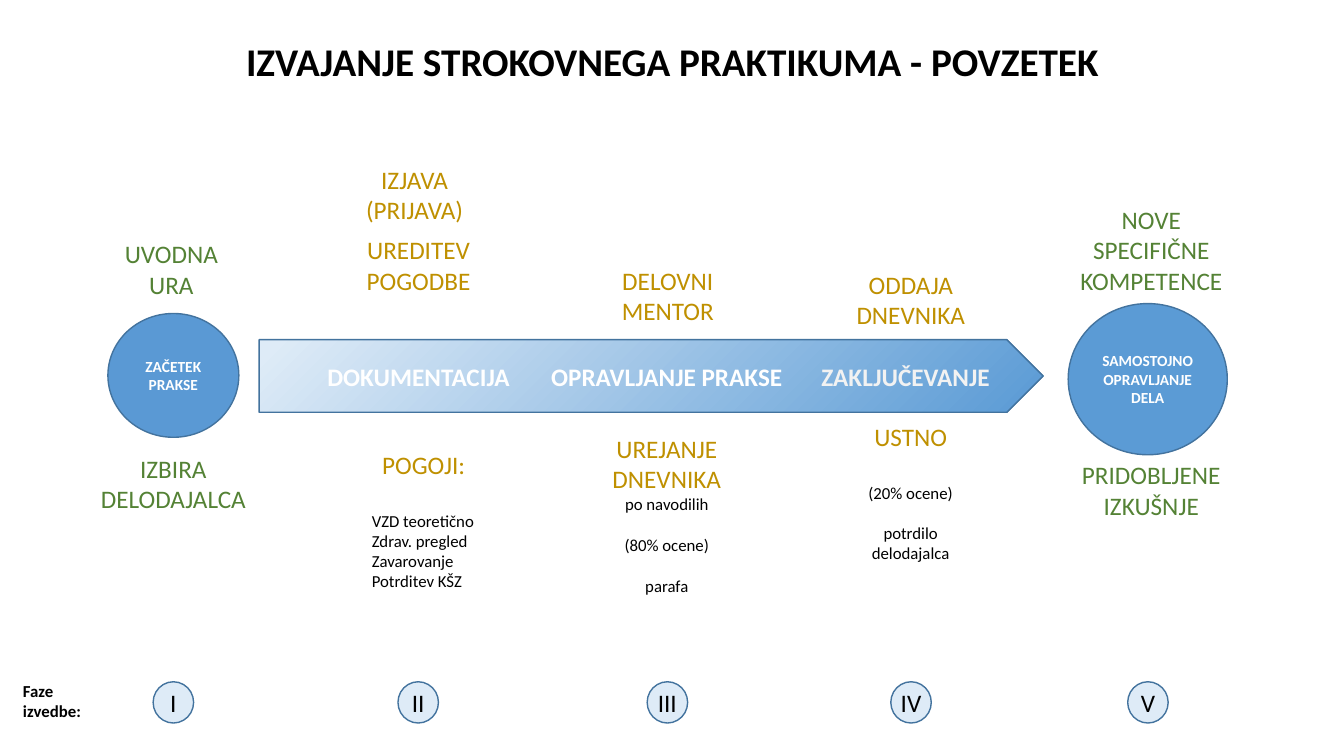
from dataclasses import dataclass

from lxml import etree
from pptx import Presentation
from pptx.dml.color import RGBColor
from pptx.enum.shapes import MSO_SHAPE
from pptx.enum.text import MSO_ANCHOR, PP_ALIGN
from pptx.oxml.ns import qn
from pptx.util import Cm, Pt

LEFT, CENTER = PP_ALIGN.LEFT, PP_ALIGN.CENTER
MIDDLE = MSO_ANCHOR.MIDDLE
ARROW, OVAL = MSO_SHAPE.PENTAGON, MSO_SHAPE.OVAL
MILESTONE = MSO_SHAPE.FLOWCHART_CONNECTOR


@dataclass(frozen=True)
class Theme:
    font: str = "Calibri"
    ink: str = "000000"
    white: str = "FFFFFF"
    off_white: str = "F2F2F2"
    green: str = "548235"
    gold: str = "BF9000"
    blue: str = "5B9BD5"
    start_blue: str = "5A99D4"
    pale: str = "DEEBF7"
    outline: str = "43739E"
    title: int = 28
    heading: int = 18
    detail: int = 12
    milestone: int = 11


THEME = Theme()


def write(frame, text, size=THEME.heading, color=THEME.ink, bold=False,
          align=CENTER, before=0):
    """Add a paragraph to the frame, filling its empty first one if there is one."""
    paragraph = frame.add_paragraph() if frame.text else frame.paragraphs[0]
    paragraph.alignment = align
    paragraph.space_before = Pt(before)
    run = paragraph.add_run()
    run.text = text
    font = run.font
    font.name, font.size, font.bold = THEME.font, Pt(size), bold
    font.color.rgb = RGBColor.from_string(color)


def offset(box, inner):
    """Turn a box measured from the corner of another into a slide box."""
    return (box[0] + inner[0], box[1] + inner[1], *inner[2:])


def add_text(slide, box, *lines):
    """Add a text box; each line is a text and its format."""
    frame = slide.shapes.add_textbox(*map(Cm, box)).text_frame
    frame.word_wrap = True
    for text, style in lines:
        write(frame, text, **style)


def add_outlined(slide, kind, box, fill):
    shape = slide.shapes.add_shape(kind, *map(Cm, box))
    shape.shadow.inherit = False
    shape.fill.solid()
    shape.fill.fore_color.rgb = RGBColor.from_string(fill)
    shape.line.color.rgb = RGBColor.from_string(THEME.outline)
    shape.line.width = Pt(1)
    shape.text_frame.word_wrap = True
    shape.text_frame.vertical_anchor = MIDDLE
    return shape


def apply_radial_gradient(shape, stops):
    """Replace the solid fill by a gradient spreading from the top left corner."""
    solid = shape.element.spPr.find(qn("a:solidFill"))
    gradient = etree.Element(qn("a:gradFill"), rotWithShape="1")
    stop_list = etree.SubElement(gradient, qn("a:gsLst"))
    for percent, color in stops:
        stop = etree.SubElement(stop_list, qn("a:gs"), pos=str(percent * 1000))
        etree.SubElement(stop, qn("a:srgbClr"), val=color)
    spread = etree.SubElement(gradient, qn("a:path"), path="circle")
    etree.SubElement(spread, qn("a:fillToRect"), r="100000", b="100000")
    solid.getparent().replace(solid, gradient)


def add_title(slide, box):
    add_text(slide, box, ("IZVAJANJE STROKOVNEGA PRAKTIKUMA - POVZETEK",
                          dict(size=THEME.title, bold=True)))


def add_process_arrow(slide, box, stages):
    arrow = add_outlined(slide, ARROW, box, THEME.blue)
    apply_radial_gradient(arrow, [(2, THEME.pale), (99, THEME.blue), (100, THEME.pale)])
    for stage, left, width, color in stages:
        add_text(slide, offset(box, (left, 0.41, width, 1.02)),
                 (stage, dict(color=color, bold=True, align=LEFT)))


def add_milestone(slide, box, label, fill, captions):
    """Add a circle with captions placed from its corner."""
    circle = add_outlined(slide, MILESTONE, box, fill)
    write(circle.text_frame, label, size=THEME.milestone, color=THEME.white, bold=True)
    for caption, place in captions:
        add_text(slide, offset(box, place), (caption, dict(color=THEME.green)))


def add_phase_notes(slide, box, notes):
    """Add the notes above and below the arrow for one phase."""
    for place, lines in notes:
        add_text(slide, offset(box, place), *lines)


def add_phase_strip(slide, box, numerals):
    add_text(slide, offset(box, (0, 0, 2.79, 1.27)),
             ("Faze izvedbe:", dict(size=THEME.detail, bold=True, align=LEFT)))
    for numeral, left in numerals:
        marker = add_outlined(slide, OVAL, offset(box, (left, 0.16, 1.02, 1.04)), THEME.pale)
        frame = marker.text_frame
        frame.word_wrap = False
        frame.margin_left = frame.margin_right = 0
        frame.margin_top = frame.margin_bottom = 0
        write(frame, numeral)


def main():
    deck = Presentation()
    deck.slide_width, deck.slide_height = Cm(33.87), Cm(19.05)
    slide = deck.slides.add_slide(deck.slide_layouts[6])

    gold = dict(color=THEME.gold)
    detail = dict(size=THEME.detail)
    listed = dict(detail, align=LEFT)
    spaced = dict(detail, before=14.65)
    after_heading = 22

    add_process_arrow(slide, (6.53, 8.56, 19.76, 1.83), [
        ("DOKUMENTACIJA", 1.47, 5.33, THEME.white),
        ("OPRAVLJANJE PRAKSE", 7.11, 6.35, THEME.white),
        ("ZAKLJUČEVANJE", 13.92, 5, THEME.off_white),
    ])
    add_milestone(slide, (2.72, 7.9, 3.3, 3.12), "ZAČETEK PRAKSE", THEME.start_blue, [
        ("UVODNA URA", (-0.05, -2.01, 3.3, 1.8)),
        ("IZBIRA DELODAJALCA", (-0.46, 3.4, 4.22, 1.8)),
    ])
    add_phase_notes(slide, (8.89, 4.01), [
        ((0, 0, 3.12, 1.8), [("IZJAVA", gold), ("(PRIJAVA)", gold)]),
        ((0.1, 1.78, 3.12, 1.8), [("UREDITEV POGODBE", gold)]),
        ((0.23, 7.19, 3.12, 3.84), [
            ("POGOJI:", gold),
            ("VZD teoretično", dict(listed, before=after_heading)),
            ("Zdrav. pregled", listed),
            ("Zavarovanje", listed),
            ("Potrditev KŠZ", listed),
        ]),
    ])
    add_phase_notes(slide, (15.14, 6.55), [
        ((0.13, 0, 3.12, 1.8), [("DELOVNI MENTOR", gold)]),
        ((0, 4.25, 3.33, 4.37), [
            ("UREJANJE DNEVNIKA", gold),
            ("po navodilih", detail),
            ("(80% ocene)", spaced),
            ("parafa", spaced),
        ]),
    ])
    add_phase_notes(slide, (21.01, 6.65), [
        ((0, 0, 3.89, 1.8), [("ODDAJA DNEVNIKA", gold)]),
        ((0.38, 3.84, 3.12, 3.84), [
            ("USTNO", gold),
            ("(20% ocene)", dict(detail, before=after_heading)),
            ("potrdilo delodajalca", spaced),
        ]),
    ])
    add_milestone(slide, (26.92, 7.65, 4.01, 3.81), "SAMOSTOJNO OPRAVLJANJE DELA",
                  THEME.blue, [
                      ("NOVE SPECIFIČNE KOMPETENCE", (0.05, -2.62, 4.09, 2.57)),
                      ("PRIDOBLJENE IZKUŠNJE", (0.05, 3.81, 4.09, 1.8)),
                  ])
    add_phase_strip(slide, (0.33, 17.02), [
        ("I", 3.53), ("II", 9.7), ("III", 15.98), ("IV", 22.12), ("V", 28.09),
    ])
    add_title(slide, (0.86, 0.81, 32.16, 1.45))

    deck.save("out.pptx")


if __name__ == "__main__":
    main()
